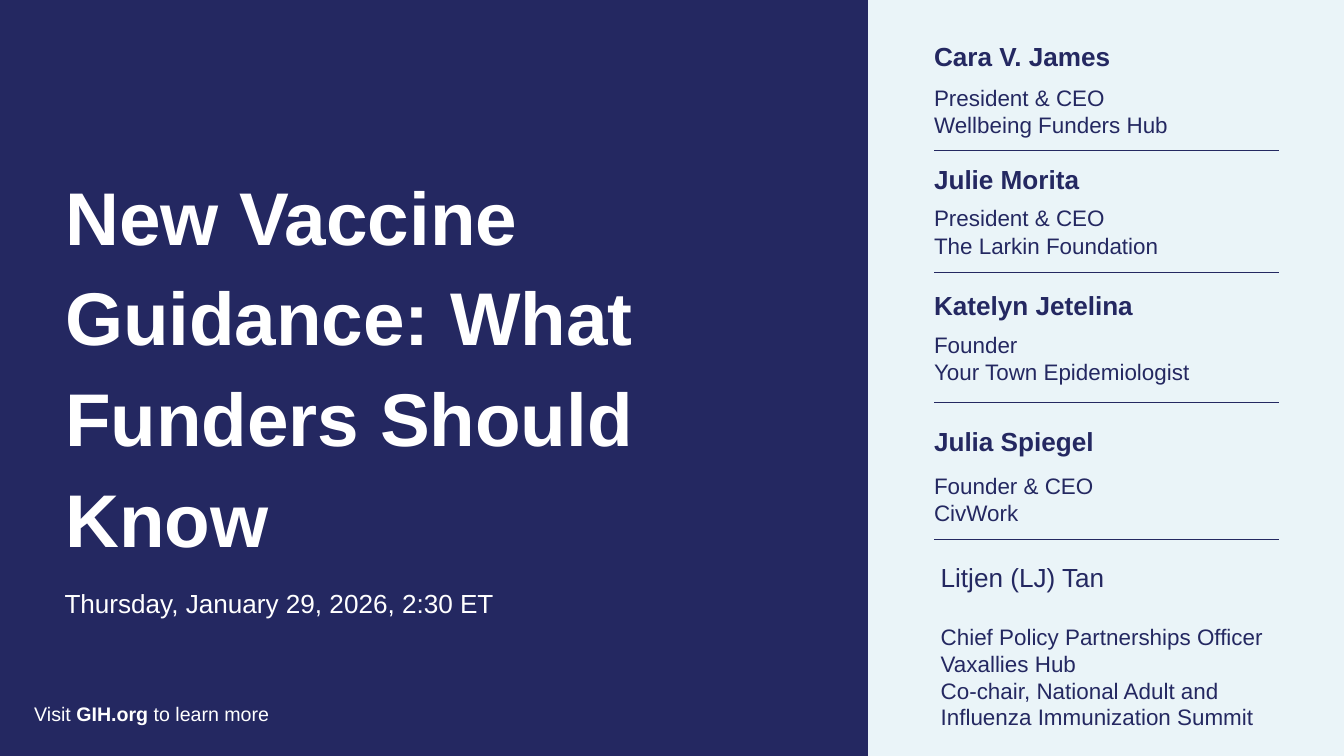
import pptx
import pptx.util
import pptx.dml.color
import pptx.enum.shapes
import pptx.enum.text
import pptx.oxml.ns
import lxml.etree

Pt = pptx.util.Pt
Color = pptx.dml.color.RGBColor.from_string

# Content
TITLE = "New Vaccine Guidance: What Funders Should Know"
DATE = "Thursday, January 29, 2026, 2:30 ET"
FOOTER = [("Visit ", False), ("GIH.org ", True), ("to learn more", False)]
# name, role lines, then tops of name, role and rule below
SPEAKERS = [
    ("Cara V. James", ["President & CEO", "Wellbeing Funders Hub"], 43.2, 89.3, 160.6),
    ("Julie Morita", ["President & CEO", "The Larkin Foundation"], 175, 218.2, 292.3),
    ("Katelyn Jetelina", ["Founder", "Your Town Epidemiologist"], 310.3, 354.2, 431.3),
    ("Julia Spiegel", ["Founder & CEO", "CivWork"], 455.8, 504.7, 578.2),
]
LAST_NAME = "Litjen (LJ) Tan"
LAST_ROLES = [
    "Chief Policy Partnerships Officer Vaxallies Hub",
    "Co-chair, National Adult and Influenza Immunization Summit",
]

# Theme and layout
THEME = {
    "navy": Color("242861"), "pale": Color("EAF4F8"), "white": Color("FFFFFF"),
    "font": "Arial", "title": 80, "name": 28, "role": 24, "footer": 21,
}
PAGE_WIDTH, PAGE_HEIGHT = 1440, 810
PANEL_LEFT = 930.2
COLUMN_LEFT, COLUMN_WIDTH = 1000.8, 369.4


def style(size, color, bold=False):
    return {"name": THEME["font"], "size": Pt(THEME[size]), "bold": bold}, THEME[color]


def add_span(para, text, look):
    span = para.add_run()
    span.text = text
    values, color = look
    for key, value in values.items():
        setattr(span.font, key, value)
    span.font.color.rgb = color


def write(box, place, paras, spacing=None, margins=(0, 0)):
    """Place a box and fill it; each paragraph is a list of (text, look)."""
    box.left, box.top, box.width, box.height = (Pt(value) for value in place)
    frame = box.text_frame
    across, down = (Pt(value) for value in margins)
    settings = {
        "word_wrap": True, "auto_size": pptx.enum.text.MSO_AUTO_SIZE.NONE,
        "vertical_anchor": pptx.enum.text.MSO_ANCHOR.TOP,
        "margin_left": across, "margin_right": across,
        "margin_top": down, "margin_bottom": down,
    }
    for key, value in settings.items():
        setattr(frame, key, value)
    for index, spans in enumerate(paras):
        para = frame.add_paragraph() if index else frame.paragraphs[0]
        para.alignment = pptx.enum.text.PP_ALIGN.LEFT
        para.space_before = Pt(0)
        if spacing:
            para.line_spacing = Pt(spacing)
        for text, look in spans:
            add_span(para, text, look)
    return frame


def new_box(page):
    return page.shapes.add_textbox(0, 0, 0, 0)


def add_rule(page, top):
    rule = page.shapes.add_connector(
        pptx.enum.shapes.MSO_CONNECTOR.STRAIGHT,
        Pt(COLUMN_LEFT), Pt(top), Pt(COLUMN_LEFT + COLUMN_WIDTH), Pt(top))
    rule.line.color.rgb = THEME["navy"]
    rule.line.width = Pt(0.75)
    lxml.etree.SubElement(rule._element.spPr, pptx.oxml.ns.qn("a:effectLst"))


def main():
    deck = pptx.Presentation()
    deck.slide_width, deck.slide_height = Pt(PAGE_WIDTH), Pt(PAGE_HEIGHT)
    page = deck.slides.add_slide(deck.slide_layouts[0])
    page.background.fill.solid()
    page.background.fill.fore_color.rgb = THEME["navy"]

    # Speaker panel
    panel = page.shapes.add_shape(
        pptx.enum.shapes.MSO_SHAPE.RECTANGLE,
        Pt(PANEL_LEFT), 0, Pt(PAGE_WIDTH - PANEL_LEFT), Pt(PAGE_HEIGHT))
    panel.shadow.inherit = False
    panel.fill.solid()
    panel.fill.fore_color.rgb = THEME["pale"]
    panel.line.fill.background()

    # Title, date and footer
    write(page.shapes.title, (69.8, 170.6, 720, 436.3),
          [[(TITLE, style("title", "white", True))]], 108)
    write(page.placeholders[1], (69.1, 623.5, 761, 36),
          [[(DATE, style("name", "white"))]], 39.2)
    write(new_box(page), (36.7, 748.1, 412.6, 31.7),
          [[(text, style("footer", "white", bold)) for text, bold in FOOTER]], 29.4)

    # Speakers
    role_look = style("role", "navy")
    for name, roles, name_top, role_top, rule_top in SPEAKERS:
        write(new_box(page), (COLUMN_LEFT, name_top, COLUMN_WIDTH, 32.4),
              [[(name, style("name", "navy", True))]], 33.6)
        write(new_box(page), (COLUMN_LEFT, role_top, COLUMN_WIDTH, 56.9),
              [[(role, role_look)] for role in roles], 29.4)
        add_rule(page, rule_top)

    # Last speaker, name and roles in one box
    frame = write(new_box(page), (COLUMN_LEFT, 598.3, 393.1, 191.5),
                  [[(LAST_NAME, style("name", "navy"))]]
                  + [[(role, role_look)] for role in LAST_ROLES],
                  margins=(7.2, 3.6))
    frame.paragraphs[1].space_before = Pt(32)

    deck.save("out.pptx")


if __name__ == "__main__":
    main()
